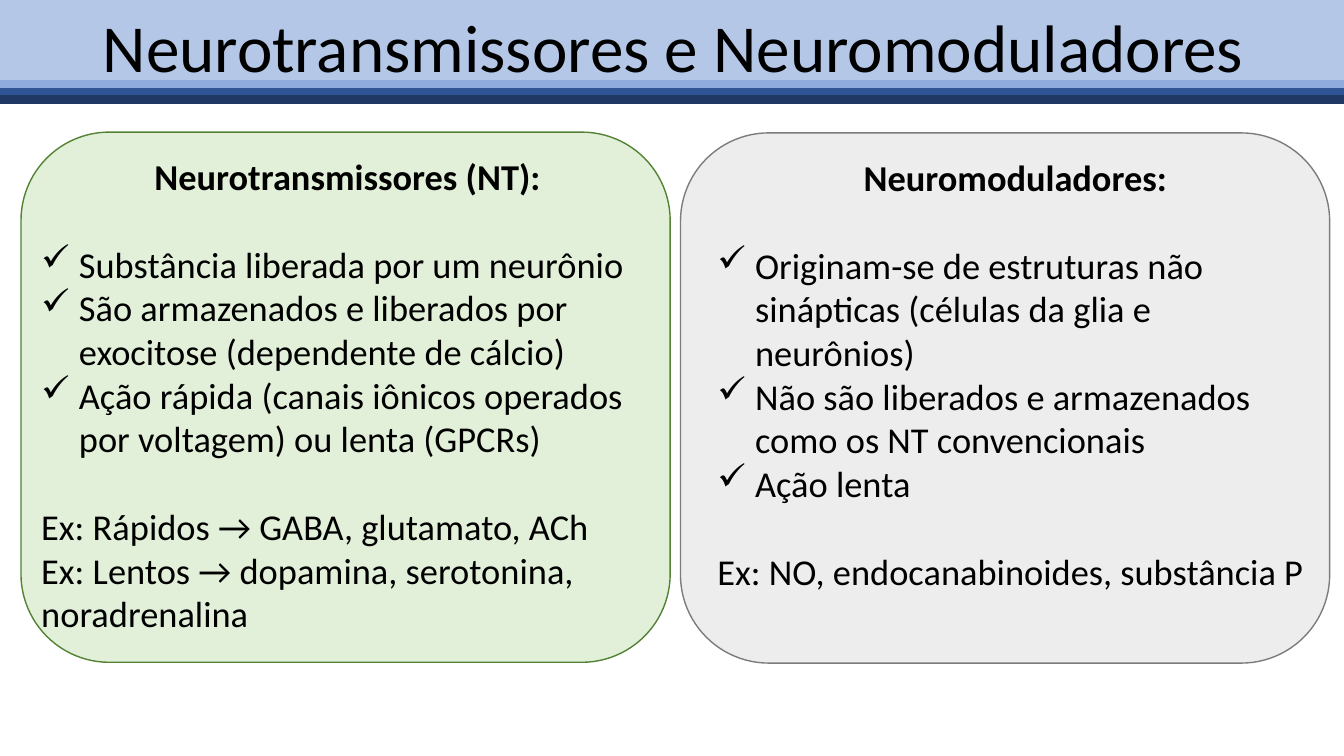
from dataclasses import dataclass

from lxml import etree
from pptx import Presentation
from pptx.dml.color import RGBColor
from pptx.enum.shapes import MSO_CONNECTOR, MSO_SHAPE
from pptx.enum.text import MSO_AUTO_SIZE, PP_ALIGN
from pptx.oxml.ns import qn
from pptx.util import Cm, Pt

LINE = MSO_CONNECTOR.STRAIGHT
RECT = MSO_SHAPE.RECTANGLE
ROUND = MSO_SHAPE.ROUNDED_RECTANGLE
GROW = MSO_AUTO_SIZE.SHAPE_TO_FIT_TEXT
CENTER = PP_ALIGN.CENTER
WIDE, HIGH = 33.87, 19.05


@dataclass(frozen=True)
class Theme:
    """Colours, font and type sizes of the slide."""
    ink: str = "000000"
    band: str = "B4C7E7"
    rules: tuple = ("8FAADC", "2F5597", "203864")
    green: tuple = ("E2F0D9", "548235")
    gray: tuple = ("EDEDED", "7C7C7C")
    font: str = "Calibri"
    title: int = 48
    body: int = 26
    gap: float = 31.5


THEME = Theme()

LEFT = ("Neurotransmissores (NT):", [
    "Substância liberada por um neurônio",
    "São armazenados e liberados por exocitose (dependente de cálcio)",
    "Ação rápida (canais iônicos operados por voltagem) ou lenta (GPCRs)",
], [
    "Ex: Rápidos → GABA, glutamato, ACh",
    "Ex: Lentos → dopamina, serotonina, noradrenalina",
])
RIGHT = ("Neuromoduladores:", [
    "Originam-se de estruturas não sinápticas (células da glia e neurônios)",
    "Não são liberados e armazenados como os NT convencionais",
    "Ação lenta",
], ["Ex: NO, endocanabinoides, substância P"])


def color(code):
    """Turn a hex code into a colour."""
    return RGBColor.from_string(code)


def add_box(shapes, kind, box, fill, edge=None):
    """Add a filled shape, with an edge if one is given."""
    shape = shapes.add_shape(kind, *map(Cm, box))
    shape.shadow.inherit = False
    shape.fill.solid()
    shape.fill.fore_color.rgb = color(fill)
    if edge:
        shape.line.color.rgb = color(edge)
        shape.line.width = Pt(1)
    else:
        shape.line.fill.background()


def add_frame(slide, box):
    """Add a wrapping text box and return its frame."""
    frame = slide.shapes.add_textbox(*map(Cm, box)).text_frame
    frame.word_wrap = True
    frame.auto_size = GROW
    return frame


def add_text(para, text, size, bold=False):
    """Add one styled run to a paragraph."""
    run = para.add_run()
    run.text = text
    run.font.name = THEME.font
    run.font.size = Pt(size)
    run.font.bold = bold
    run.font.color.rgb = color(THEME.ink)


def add_check(para):
    """Give a paragraph a hanging check mark."""
    props = para._p.get_or_add_pPr()
    props.set("marL", str(Cm(0.95)))
    props.set("indent", str(-Cm(0.95)))
    etree.SubElement(props, qn("a:buChar")).set("char", "✓")


def add_header(slide, box, title):
    """Draw the title band with its three rules."""
    left, top, width, height = box
    group = slide.shapes.add_group_shape()
    add_box(group.shapes, RECT, box, THEME.band)
    for i, code in enumerate(THEME.rules):
        y = Cm(top + height + 0.19 * i)
        rule = group.shapes.add_connector(LINE, Cm(left), y, Cm(left + width), y)
        rule.line.color.rgb = color(code)
        rule.line.width = Pt(6)
        etree.SubElement(rule._element.spPr, qn("a:effectLst"))
    para = add_frame(slide, (left + 0.08, top, width - 0.08, 2.31)).paragraphs[0]
    para.alignment = CENTER
    add_text(para, title, THEME.title)


def add_panel(slide, box, look, pad, words):
    """Draw a rounded panel with a heading, checked points and examples."""
    left, top, width, height = box
    head, points, notes = words
    add_box(slide.shapes, ROUND, box, *look)
    frame = add_frame(slide, (left + pad, top + 0.43, width - pad - 0.15, height - 0.89))
    para = frame.paragraphs[0]
    para.alignment = CENTER
    add_text(para, head, THEME.body, True)
    for part in (points, notes):
        for i, text in enumerate(part):
            para = frame.add_paragraph()
            if part is points:
                add_check(para)
            if i == 0:
                para.space_before = Pt(THEME.gap)
            add_text(para, text, THEME.body)


def main():
    """Build and save the slide."""
    deck = Presentation()
    deck.slide_width, deck.slide_height = Cm(WIDE), Cm(HIGH)
    slide = deck.slides.add_slide(deck.slide_layouts[6])
    add_panel(slide, (17.15, 3.35, 16.36, 13.36), THEME.gray, 0.68, RIGHT)
    add_panel(slide, (0.53, 3.33, 16.36, 13.36), THEME.green, 0.26, LEFT)
    add_header(slide, (0, 0, WIDE, 2.13), "Neurotransmissores e Neuromoduladores")
    deck.save("out.pptx")


if __name__ == "__main__":
    main()
